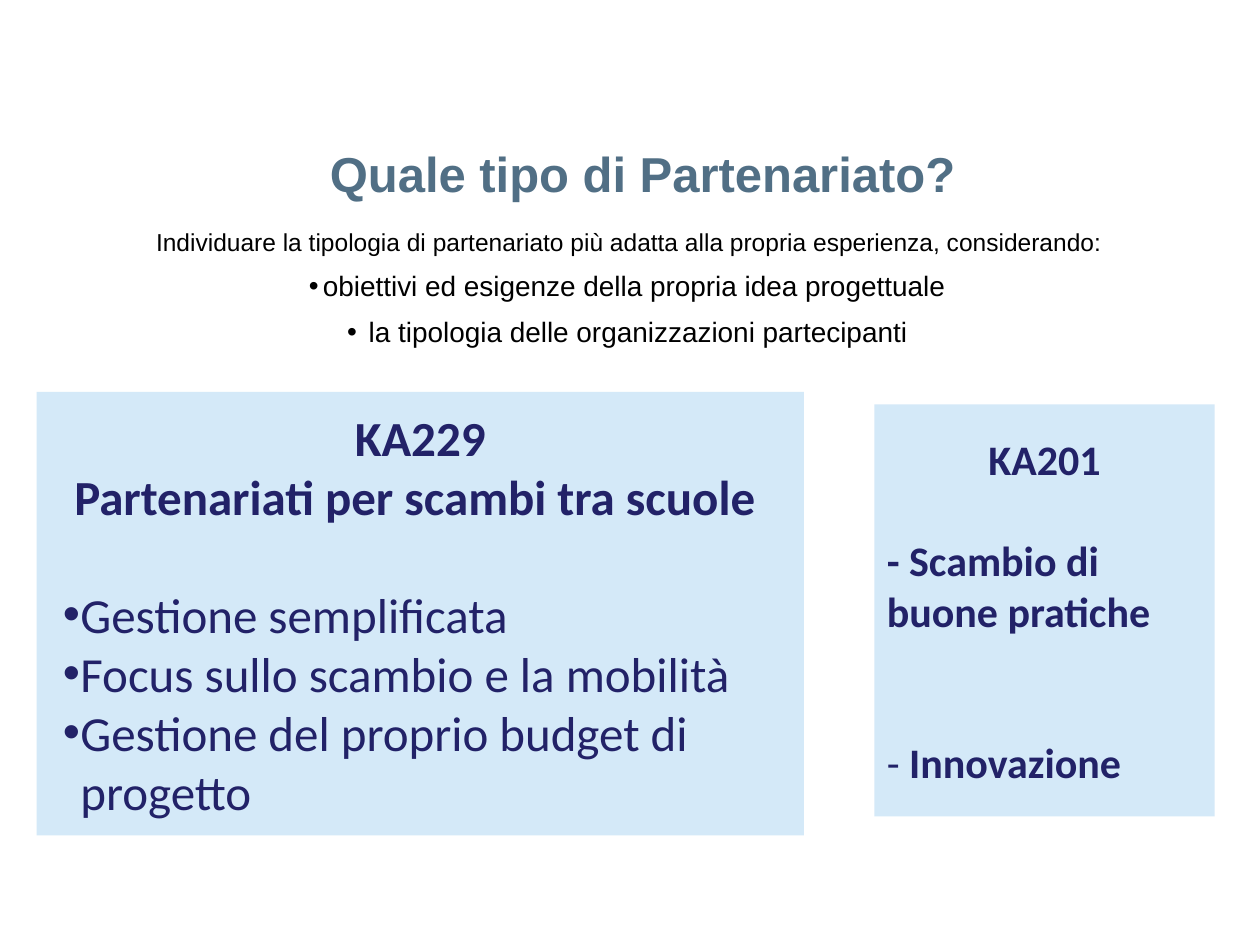
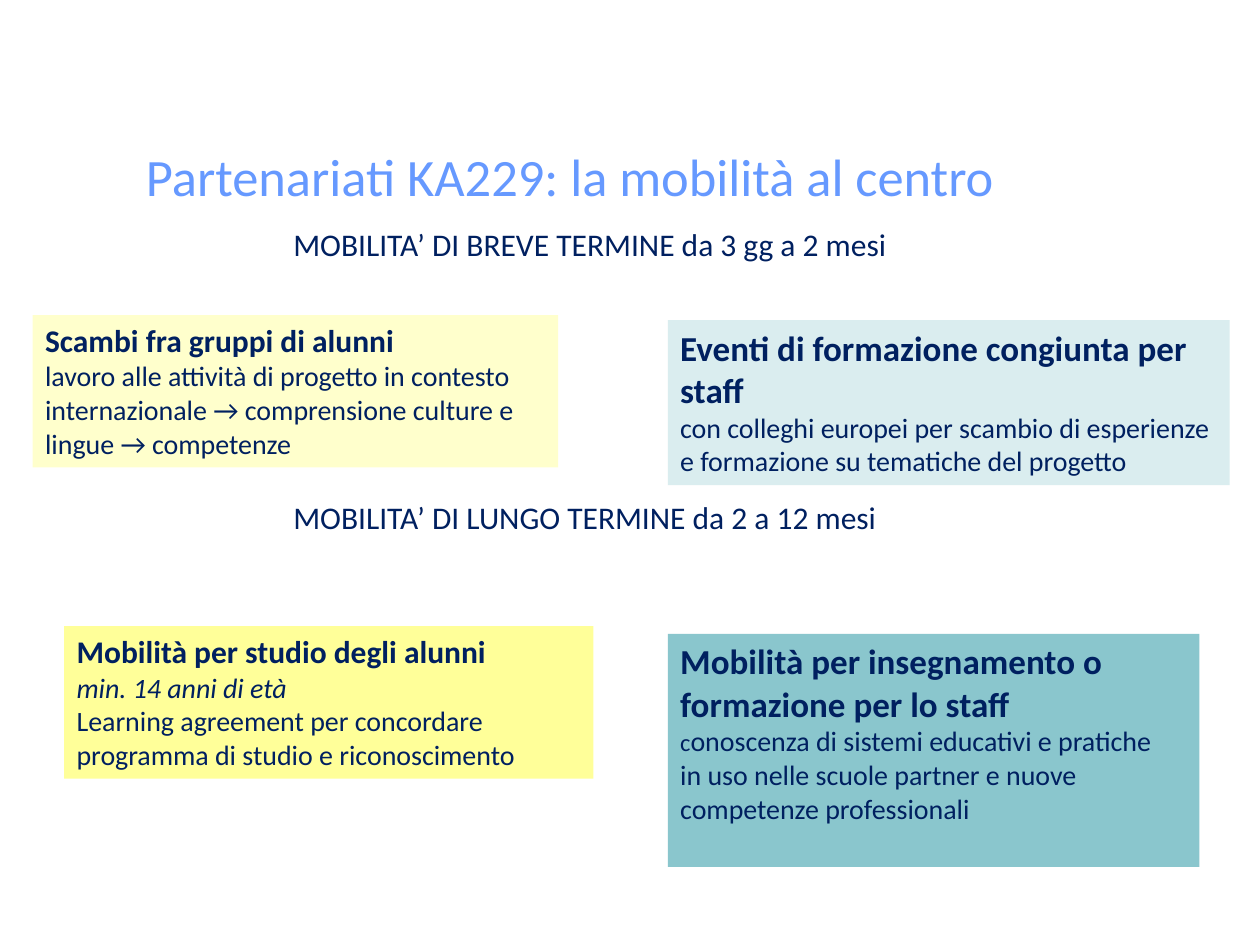
import pptx
import pptx.util
import pptx.dml.color
import pptx.enum.shapes
import pptx.enum.text
import pptx.oxml.ns
import lxml.etree

PX = 9144  # 100 px to the inch
NAVY, INDIGO, SKY = "002060", "222268", "95C9EE"
CENTER = pptx.enum.text.PP_ALIGN.CENTER
LEFT = pptx.enum.text.PP_ALIGN.LEFT
TOP = pptx.enum.text.MSO_ANCHOR.TOP
MIDDLE = pptx.enum.text.MSO_ANCHOR.MIDDLE
RECTANGLE = pptx.enum.shapes.MSO_SHAPE.RECTANGLE
qn = pptx.oxml.ns.qn
color = pptx.dml.color.RGBColor.from_string


def place(page, kind, area, fill=None):
    """Put a title, text box or filled rectangle at an area given in px."""
    left, top, width, height = [length * PX for length in area]
    if kind == "title":
        box = page.shapes.title
        box.left, box.top, box.width, box.height = left, top, width, height
    elif kind == "text":
        box = page.shapes.add_textbox(left, top, width, height)
    else:
        box = page.shapes.add_shape(RECTANGLE, left, top, width, height)
        box.shadow.inherit = False
        box.line.fill.background()
        box.fill.solid()
        box.fill.fore_color.rgb = color(fill)
    return box


def write(box, lines, hue, face="Calibri", anchor=TOP):
    """Fill a box; each line is (pieces of text, size, options)."""
    frame = box.text_frame
    frame.word_wrap = True
    frame.auto_size = pptx.enum.text.MSO_AUTO_SIZE.NONE
    frame.vertical_anchor = anchor
    for index, (pieces, size, options) in enumerate(lines):
        para = frame.paragraphs[0] if index == 0 else frame.add_paragraph()
        for piece in pieces:
            para.add_run().text = piece
        para.alignment = options.get("align", LEFT)
        if "before" in options:
            para.space_before = pptx.util.Pt(options["before"])
        if "bullet" in options:
            margin, hanging = options["bullet"]
            settings = para._p.get_or_add_pPr()
            settings.set("marL", str(margin * PX))
            settings.set("indent", str(-hanging * PX))
            lxml.etree.SubElement(settings, qn("a:buFont"), typeface="Arial")
            lxml.etree.SubElement(settings, qn("a:buChar"), char="•")
        para.font.name = face
        para.font.size = pptx.util.Pt(size)
        para.font.color.rgb = color(hue)
        para.font.bold = options.get("bold", False)
        para.font.italic = options.get("italic", False)
    return frame.paragraphs


deck = pptx.Presentation()
deck.slide_width, deck.slide_height = 1000 * PX, 750 * PX
title_only = deck.slide_layouts[5]
heading = {"bold": True, "align": CENTER}

# Slide 1: which partnership
page = deck.slides.add_slide(title_only)
title = place(page, "title", (168, 101, 684, 72))
write(title, [(["Quale tipo di Partenariato?"], 28, heading)],
      "516F85", "Arial", MIDDLE)

criterion = {"align": CENTER, "before": 7.2, "bullet": (6, 11)}
criteria = place(page, "text", (8, 175, 983, 120))
write(criteria, [
    (["Individuare la tipologia di partenariato più adatta alla propria "
      "esperienza, considerando:"], 14, {"align": CENTER}),
    (["obiettivi ed esigenze della propria idea progettuale"], 16, criterion),
    ([" la tipologia delle organizzazioni partecipanti"], 16, criterion),
], "000000", "Arial")

# The two partnership panels
feature = {"bullet": (25, 14)}
panels = [
    ((29, 311, 609, 352), [
        (["KA229"], 28, heading),
        (["Partenariati per scambi tra scuole "], 28, heading),
        (["Gestione semplificata"], 28, {**feature, "before": 34}),
        (["Focus sullo scambio e la mobilità"], 28, feature),
        (["Gestione del proprio budget di progetto"], 28, feature),
    ]),
    ((694, 321, 270, 327), [
        (["KA201"], 24, heading),
        (["- Scambio di buone pratiche"], 24, {"bold": True, "before": 29}),
        (["- ", "Innovazione"], 24, {"bold": True, "before": 58}),
    ]),
]
for area, lines in panels:
    panel = place(page, "panel", area, SKY)
    sky = panel.fill._xPr.find(".//" + qn("a:srgbClr"))
    lxml.etree.SubElement(sky, qn("a:alpha"), val="40000")
    paras = write(panel, lines, INDIGO, anchor=MIDDLE)
paras[-1].runs[0].font.bold = False  # dash before Innovazione

# Slide 2: mobility in KA229
page = deck.slides.add_slide(title_only)
title = place(page, "title", (-28, 109, 961, 43))
write(title, [(["Partenariati KA229: la mobilità al centro"], 30,
               {"align": CENTER})], "6699FF")

# Duration headings
for top, duration in [(174, "MOBILITA’ DI BREVE TERMINE da 3 gg a 2 mesi"),
                      (390, "MOBILITA’ DI LUNGO TERMINE da 2 a 12 mesi")]:
    write(place(page, "text", (223, top, 644, 40)), [([duration], 18, {})], NAVY)

# Activity cards: area, fill, heading size, heading, details
cards = [
    ((26, 250, 417, 121), "FFFFCC", 18, "Scambi fra gruppi di alunni", [
        (["lavoro alle attività di progetto in contesto internazionale → "
          "comprensione culture e lingue → competenze"], 16, {})]),
    ((530, 254, 446, 131), "DAEDEF", 20,
     "Eventi di formazione congiunta per staff", [
         (["con colleghi europei per scambio di esperienze e formazione su "
           "tematiche del progetto"], 16, {})]),
    ((51, 497, 420, 121), "FFFF99", 18, "Mobilità per studio degli alunni", [
        (["min. 14 anni di età"], 16, {"italic": True}),
        (["Learning agreement per concordare programma di studio e "
          "riconoscimento"], 16, {})]),
    ((530, 503, 422, 185), "8AC6CD", 20,
     "Mobilità per insegnamento o formazione per lo staff", [
         (["c", "onoscenza di sistemi educativi e pratiche"], 16, {}),
         (["in uso nelle scuole partner e nuove competenze professionali"],
          16, {})]),
]
for area, fill, size, name, details in cards:
    card = place(page, "card", area, fill)
    paras = write(card, [([name], size, {"bold": True})] + details, NAVY)
paras[1].runs[0].font.size = pptx.util.Pt(14)  # smaller first letter

deck.save("out.pptx")
